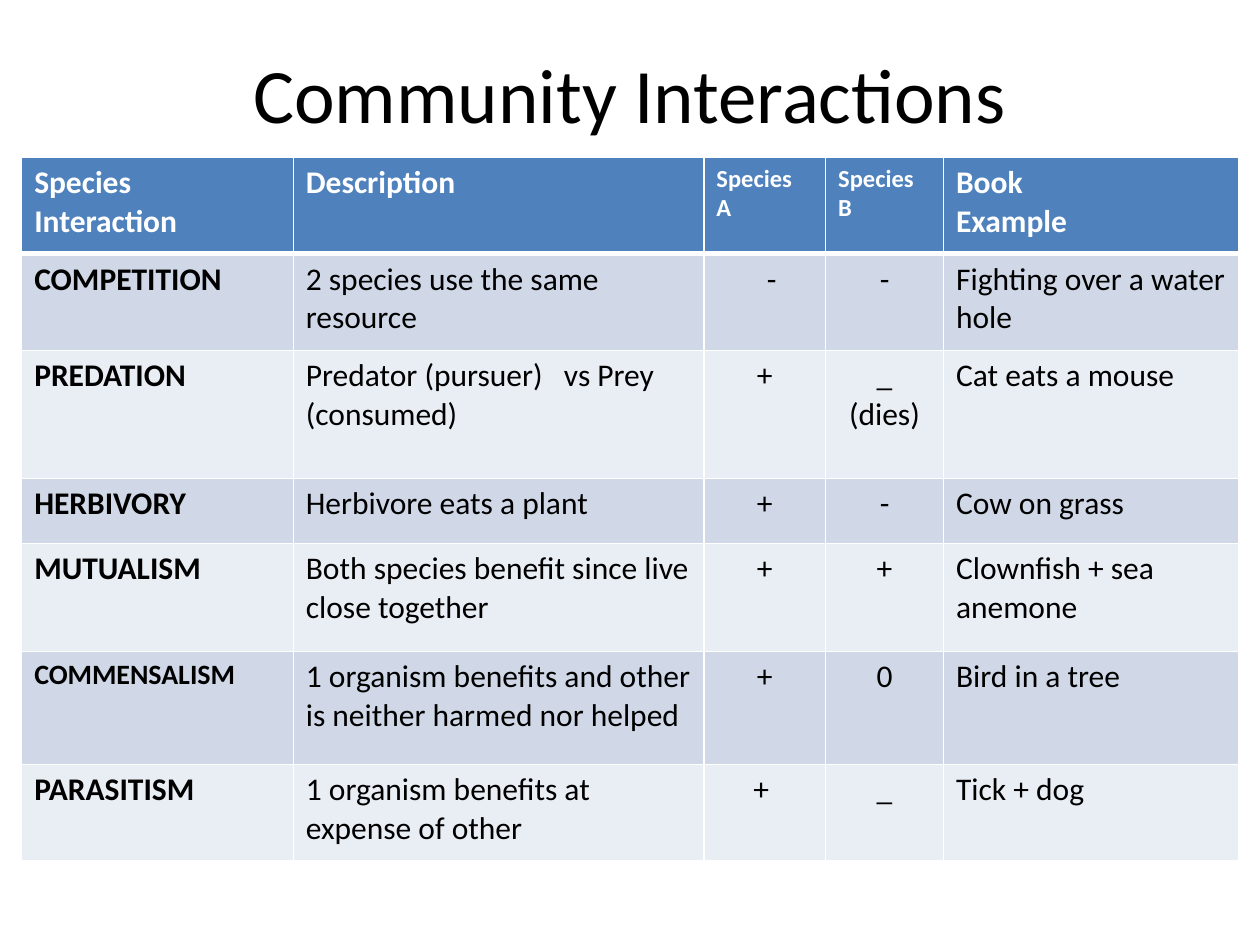
from dataclasses import dataclass

from lxml import etree
from pptx import Presentation
from pptx.dml.color import RGBColor
from pptx.enum import text
from pptx.oxml import ns
from pptx.util import Pt


@dataclass(frozen=True)
class Theme:
    font: str = "Calibri"
    ink: str = "000000"
    paper: str = "FFFFFF"
    header: str = "4F81BD"
    bands: tuple = ("D0D8E8", "E9EDF4")
    title_size: int = 44
    body_size: int = 18
    long_name_size: int = 16
    small_header_size: int = 14


theme = Theme()


def write(frame, content, size=theme.body_size, color=theme.ink, bold=False,
          align=text.PP_ALIGN.LEFT):
    frame.text = content
    for paragraph in frame.paragraphs:
        paragraph.alignment = align
        for run in paragraph.runs:
            run.font.name = theme.font
            run.font.size = Pt(size)
            run.font.bold = bold
            run.font.color.rgb = RGBColor.from_string(color)


def set_borders(cell, widths):
    properties = cell._tc.get_or_add_tcPr()
    for position, (side, width) in enumerate(widths.items()):
        line = etree.Element(ns.qn(f"a:ln{side}"), w=str(Pt(width)))
        fill = etree.SubElement(line, ns.qn("a:solidFill"))
        etree.SubElement(fill, ns.qn("a:srgbClr"), val=theme.paper)
        properties.insert(position, line)


headers = ["Species\nInteraction", "Description", "Species\nA", "Species\nB", "Book\nExample"]
interactions = [
    ["COMPETITION", "2 species use the same resource", "-", "-", "Fighting over a water hole"],
    ["PREDATION", "Predator (pursuer)   vs Prey (consumed)", "+", "_\n(dies)", "Cat eats a mouse"],
    ["HERBIVORY", "Herbivore eats a plant", "+", "-", "Cow on grass"],
    ["MUTUALISM", "Both species benefit since live close together", "+", "+",
     "Clownfish + sea anemone"],
    ["COMMENSALISM", "1 organism benefits and other is neither harmed nor helped", "+", "0",
     "Bird in a tree"],
    ["PARASITISM", "1 organism benefits at expense of other", "+", "_", "Tick + dog"],
]
column_widths = [155.2, 234.6, 69.6, 67.4, 169]
row_heights = [55, 55.3, 73.2, 37, 61.8, 64.6, 54.9]
effect_columns = (2, 3)

deck = Presentation()
deck.slide_width, deck.slide_height = Pt(720), Pt(540)
slide = deck.slides.add_slide(deck.slide_layouts[5])

title = slide.shapes.title
title.left, title.top, title.width, title.height = Pt(36), Pt(21.6), Pt(648), Pt(62.6)
title.text_frame.vertical_anchor = text.MSO_ANCHOR.MIDDLE
write(title.text_frame, "Community Interactions", size=theme.title_size,
      align=text.PP_ALIGN.CENTER)

community = slide.shapes.add_table(
    len(row_heights), len(column_widths), Pt(12.4), Pt(90),
    Pt(sum(column_widths)), Pt(sum(row_heights))).table
for column, width in zip(community.columns, column_widths):
    column.width = Pt(width)
for row, height in zip(community.rows, row_heights):
    row.height = Pt(height)

for row_index, contents in enumerate([headers] + interactions):
    is_header = row_index == 0
    background = theme.header if is_header else theme.bands[(row_index - 1) % 2]
    for column_index, content in enumerate(contents):
        cell = community.cell(row_index, column_index)
        is_effect = column_index in effect_columns
        size = theme.body_size
        if is_header and is_effect:
            size = theme.small_header_size
        elif content == "COMMENSALISM":
            size = theme.long_name_size
        centered = is_effect and not is_header
        write(cell.text_frame, content, size=size,
              color=theme.paper if is_header else theme.ink,
              bold=is_header or column_index == 0,
              align=text.PP_ALIGN.CENTER if centered else text.PP_ALIGN.LEFT)
        cell.fill.solid()
        cell.fill.fore_color.rgb = RGBColor.from_string(background)
        set_borders(cell, {"L": 1, "R": 1, "T": 3 if row_index == 1 else 1,
                           "B": 3 if is_header else 1})

community.cell(1, 2).margin_left = Pt(15.2)
community.cell(6, 2).margin_right = Pt(11.2)

deck.save("out.pptx")
